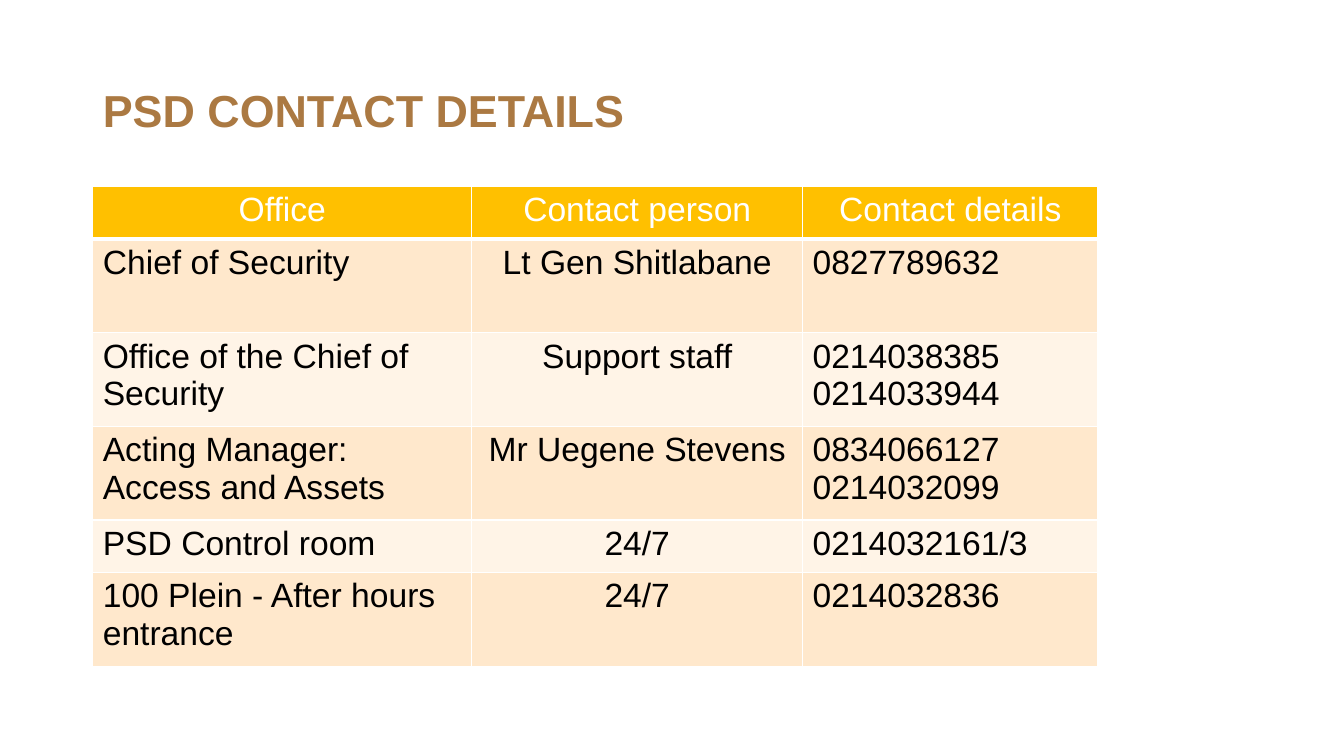
import dataclasses

import pptx
import pptx.dml.color
import pptx.enum.text
import pptx.oxml
import pptx.oxml.ns
import pptx.util
from pptx.util import Inches

ALIGN = pptx.enum.text.PP_ALIGN
ANCHOR = pptx.enum.text.MSO_ANCHOR


@dataclasses.dataclass(frozen=True)
class Theme:
    font: str = "Arial"
    title_size: int = 32
    table_size: int = 24
    title: str = "AB7942"
    header: str = "FFC000"
    dark_band: str = "FFE8CC"
    light_band: str = "FFF4E7"
    white: str = "FFFFFF"
    text: str = "000000"


@dataclasses.dataclass(frozen=True)
class Contact:
    office: str
    person: str
    numbers: str
    height: float


THEME = Theme()
LEFT, WIDTH = 0.92, 9.97
COLUMN_WIDTHS = (3.76, 3.28, 2.93)
HEADER = Contact("Office", "Contact person", "Contact details", 0.52)
CONTACTS = (
    Contact("Chief of Security", "Lt Gen Shitlabane", "0827789632", 0.93),
    Contact("Office of the Chief of Security", "Support staff", "0214038385\n0214033944", 0.93),
    Contact("Acting Manager: Access and Assets", "Mr Uegene Stevens", "0834066127\n0214032099", 0.93),
    Contact("PSD Control room", "24/7", "0214032161/3", 0.52),
    Contact("100 Plein - After hours entrance", "24/7", "0214032836", 0.93),
)


def write_text(frame, text: str, *, size: int, color: str, bold: bool = False,
               align=ALIGN.LEFT, line_spacing: float = 1.0) -> None:
    frame.text = text
    for paragraph in frame.paragraphs:
        paragraph.alignment = align
        paragraph.line_spacing = line_spacing
        for run in paragraph.runs:
            run.font.name = THEME.font
            run.font.size = pptx.util.Pt(size)
            run.font.bold = bold
            run.font.color.rgb = pptx.dml.color.RGBColor.from_string(color)


def set_borders(cell, bottom_width: float) -> None:
    properties = cell._tc.get_or_add_tcPr()
    for side, width in (("L", 1), ("R", 1), ("T", 1), ("B", bottom_width)):
        properties.append(pptx.oxml.parse_xml(
            f'<a:ln{side} {pptx.oxml.ns.nsdecls("a")} w="{pptx.util.Pt(width)}">'
            f'<a:solidFill><a:srgbClr val="{THEME.white}"/></a:solidFill></a:ln{side}>'))


def add_title(slide, text: str) -> None:
    title = slide.shapes.title
    title.left, title.top = Inches(LEFT), Inches(0.4)
    title.width, title.height = Inches(WIDTH), Inches(1.45)
    title.text_frame.vertical_anchor = ANCHOR.MIDDLE
    write_text(title.text_frame, text, size=THEME.title_size, color=THEME.title,
               bold=True, line_spacing=0.9)


def fill_row(table, row_index: int, contact: Contact) -> None:
    is_header = row_index == 0
    band = THEME.dark_band if row_index % 2 else THEME.light_band
    table.rows[row_index].height = Inches(contact.height)
    for column_index, text in enumerate((contact.office, contact.person, contact.numbers)):
        cell = table.cell(row_index, column_index)
        set_borders(cell, 3 if is_header else 1)
        cell.fill.solid()
        cell.fill.fore_color.rgb = pptx.dml.color.RGBColor.from_string(
            THEME.header if is_header else band)
        centered = is_header or column_index == 1
        write_text(cell.text_frame, text, size=THEME.table_size,
                   color=THEME.white if is_header else THEME.text,
                   align=ALIGN.CENTER if centered else ALIGN.LEFT)


def add_contact_table(slide) -> None:
    rows = (HEADER, *CONTACTS)
    height = sum(row.height for row in rows)
    table = slide.shapes.add_table(len(rows), len(COLUMN_WIDTHS), Inches(LEFT), Inches(1.85),
                                   Inches(WIDTH), Inches(height)).table
    for column, width in zip(table.columns, COLUMN_WIDTHS):
        column.width = Inches(width)
    for row_index, contact in enumerate(rows):
        fill_row(table, row_index, contact)


def main() -> None:
    presentation = pptx.Presentation()
    presentation.slide_width = Inches(13.33)
    presentation.slide_height = Inches(7.5)
    slide = presentation.slides.add_slide(presentation.slide_layouts.get_by_name("Title Only"))
    add_title(slide, "PSD CONTACT DETAILS")
    add_contact_table(slide)
    presentation.save("out.pptx")


if __name__ == "__main__":
    main()
